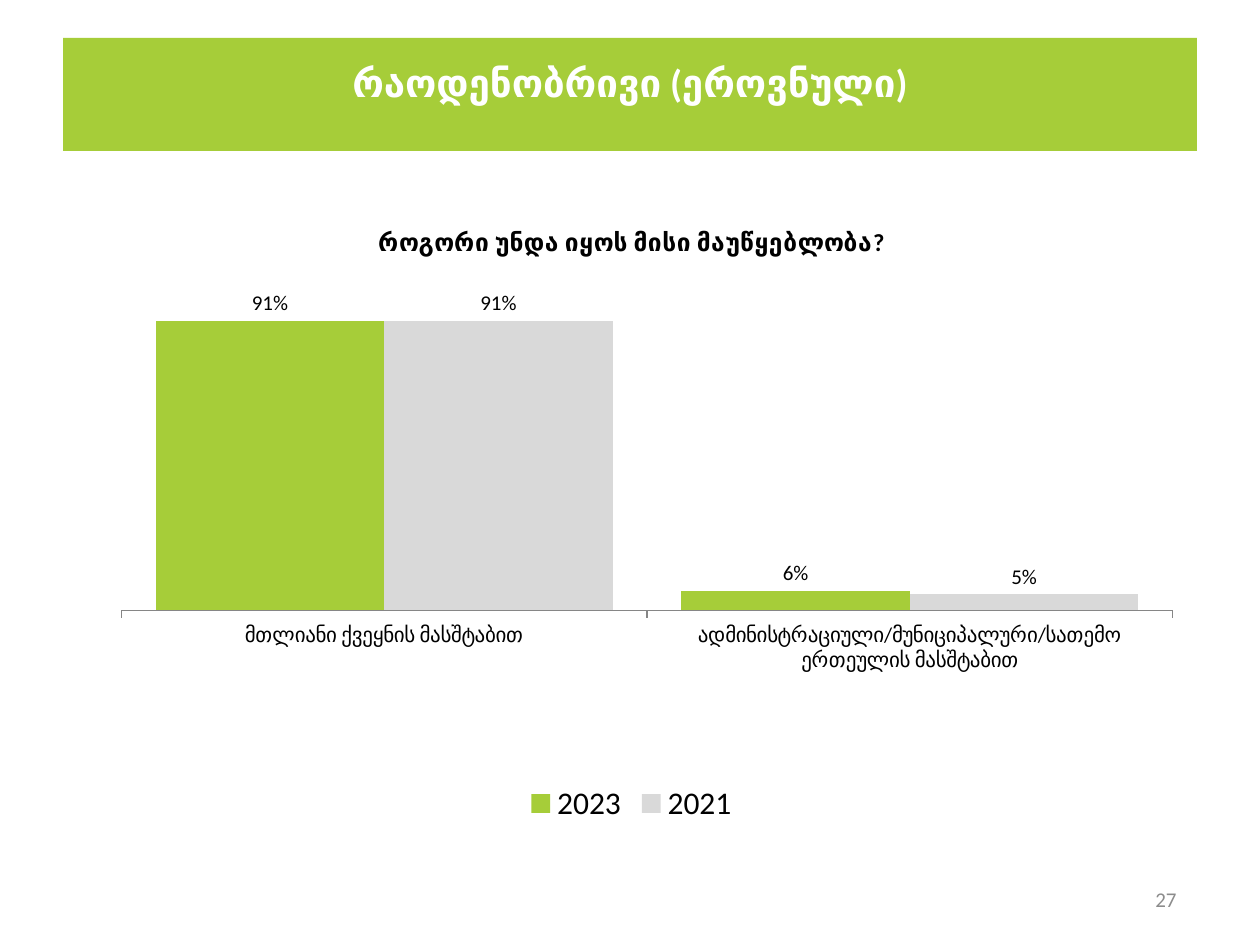
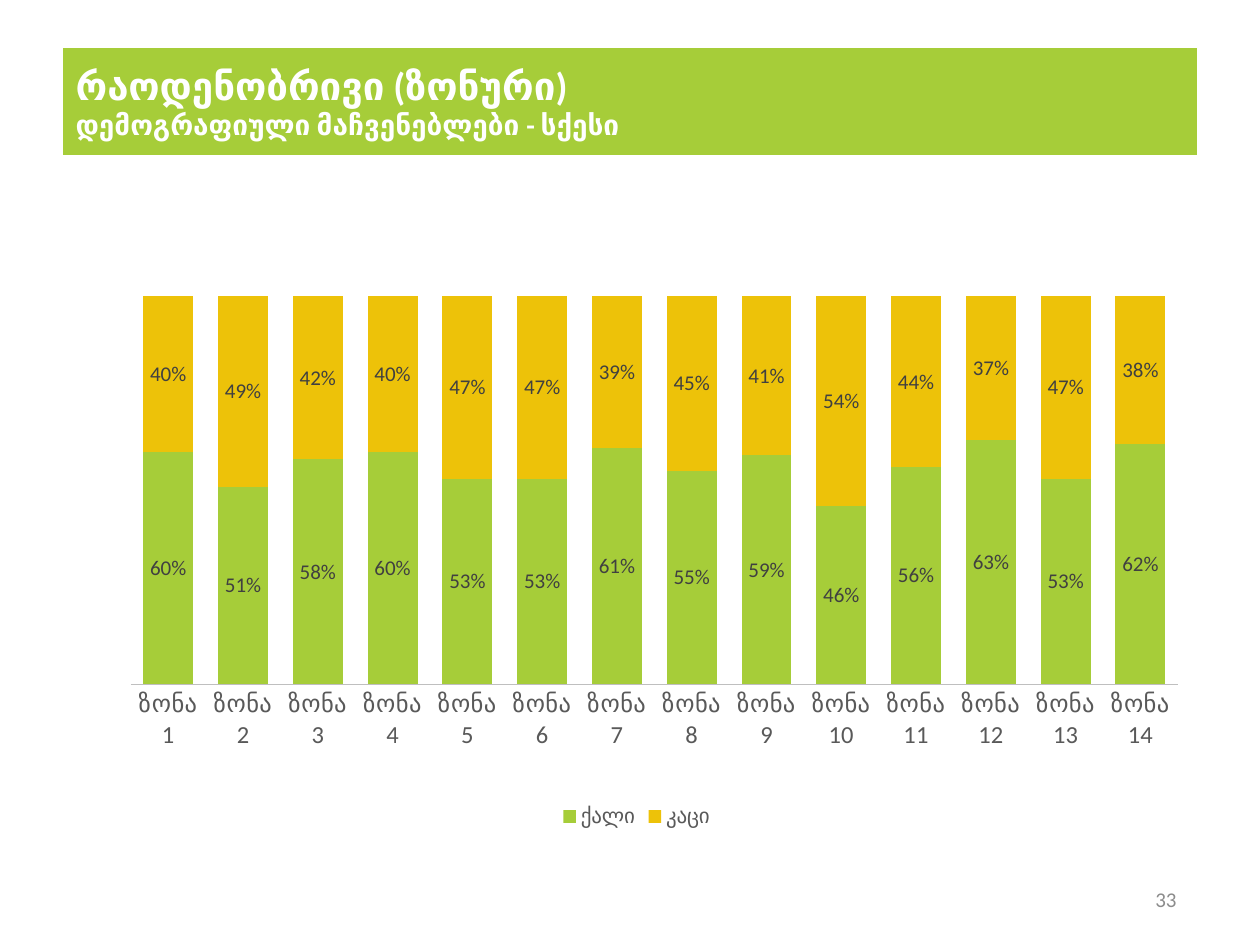
from dataclasses import dataclass

from lxml import etree
from pptx import Presentation
from pptx.chart.data import CategoryChartData
from pptx.dml.color import RGBColor
from pptx.enum.chart import (XL_CHART_TYPE, XL_LABEL_POSITION,
                             XL_LEGEND_POSITION, XL_TICK_MARK)
from pptx.enum.text import MSO_ANCHOR, MSO_AUTO_SIZE, PP_ALIGN
from pptx.oxml.ns import qn
from pptx.util import Emu, Pt

PX = 914400 / 126
TITLE_ONLY = 5
CLUSTERED, STACKED = XL_CHART_TYPE.COLUMN_CLUSTERED, XL_CHART_TYPE.COLUMN_STACKED
LABEL_ABOVE, LABEL_CENTER = XL_LABEL_POSITION.OUTSIDE_END, XL_LABEL_POSITION.CENTER
LEGEND_BOTTOM = XL_LEGEND_POSITION.BOTTOM
TICK_OUT, TICK_NONE = XL_TICK_MARK.OUTSIDE, XL_TICK_MARK.NONE
LEFT, CENTER, RIGHT = PP_ALIGN.LEFT, PP_ALIGN.CENTER, PP_ALIGN.RIGHT
MIDDLE, NO_FIT = MSO_ANCHOR.MIDDLE, MSO_AUTO_SIZE.NONE


@dataclass(frozen=True)
class Theme:
    font: str = "Calibri"
    green: str = "A6CD39"
    yellow: str = "EDC209"
    light_gray: str = "D9D9D9"
    white: str = "FFFFFF"
    black: str = "000000"
    label: str = "404040"
    axis_text: str = "595959"
    axis_dark: str = "868686"
    axis_light: str = "BFBFBF"
    number: str = "8C8C8C"
    title_size: int = 22
    subtitle_size: int = 16
    legend_size: int = 18
    heading_size: int = 14
    small_size: int = 12


THEME = Theme()


def px(value):
    return Emu(round(value * PX))


def set_format(target, values):
    for name, value in values.items():
        setattr(target, name, value)


class Deck:
    """Holds the theme and the slide being built."""

    def __init__(self, theme):
        self.theme = theme
        self.prs = Presentation()
        set_format(self.prs, {"slide_width": px(1260), "slide_height": px(945)})
        self.slide = None

    def new_slide(self):
        self.slide = self.prs.slides.add_slide(self.prs.slide_layouts[TITLE_ONLY])

    def font(self, font, size, color, bold=False):
        set_format(font, {"name": self.theme.font, "size": Pt(size), "bold": bold})
        font.color.rgb = RGBColor.from_string(color)

    def place(self, shape, box):
        set_format(shape, dict(zip(("left", "top", "width", "height"), map(px, box))))

    def title_band(self, box, title, subtitle=None, align=LEFT, lift=0):
        band = self.slide.shapes.title
        self.place(band, box)
        band.fill.solid()
        band.fill.fore_color.rgb = RGBColor.from_string(self.theme.green)
        set_format(band.text_frame, {
            "auto_size": NO_FIT, "word_wrap": True, "vertical_anchor": MIDDLE,
            "margin_top": px(6), "margin_bottom": px(6 + lift)})
        paragraph = band.text_frame.paragraphs[0]
        paragraph.alignment = align
        lines = [(title, self.theme.title_size)]
        if subtitle:
            lines.append((subtitle, self.theme.subtitle_size))
        for index, (text, size) in enumerate(lines):
            if index:
                paragraph.add_line_break()
            run = paragraph.add_run()
            run.text = text
            self.font(run.font, size, self.theme.white, True)

    def page_number(self, number):
        box = self.slide.shapes.add_textbox(*map(px, (1137, 874, 52, 50)))
        set_format(box.text_frame, {"word_wrap": True, "vertical_anchor": MIDDLE})
        paragraph = box.text_frame.paragraphs[0]
        set_format(paragraph, {"text": str(number), "alignment": RIGHT})
        self.font(paragraph.font, self.theme.small_size, self.theme.number)

    def layout(self, parent, index, **values):
        """Give a chart part a manual position, as fractions of the chart."""
        layout = parent.find(qn("c:layout"))
        if layout is None:
            layout = etree.Element(qn("c:layout"))
            parent.insert(index, layout)
        manual = etree.SubElement(layout, qn("c:manualLayout"))
        for name, value in values.items():
            etree.SubElement(manual, qn(f"c:{name}")).set("val", str(value))

    def column_chart(self, kind, box, categories, series, plot_area, maximum,
                     plot_format):
        data = CategoryChartData(number_format="0%")
        data.categories = categories
        for name, values, _ in series:
            data.add_series(name, values)
        chart = self.slide.shapes.add_chart(kind, *map(px, box), data).chart
        self.font(chart.font, self.theme.legend_size, self.theme.black)
        set_format(chart, {"has_title": False, "has_legend": True})
        set_format(chart.legend, {"position": LEGEND_BOTTOM, "include_in_layout": False})
        set_format(chart.value_axis, {
            "visible": False, "has_major_gridlines": False,
            "minimum_scale": 0, "maximum_scale": maximum, "major_unit": 0.2})
        set_format(chart.plots[0], {"vary_by_categories": False, **plot_format})
        for column, (_, _, color) in zip(chart.plots[0].series, series):
            column.invert_if_negative = False
            column.format.fill.solid()
            column.format.fill.fore_color.rgb = RGBColor.from_string(color)
        x, y, w, h = plot_area
        self.layout(chart.element.find(".//" + qn("c:plotArea")), 0,
                    layoutTarget="inner", xMode="edge", yMode="edge",
                    x=x, y=y, w=w, h=h)
        return chart

    def value_labels(self, chart, position, color):
        for column in chart.plots[0].series:
            labels = column.data_labels
            set_format(labels, {
                "show_value": True, "position": position,
                "number_format": "0%", "number_format_is_linked": False})
            self.font(labels.font, self.theme.small_size, color)

    def category_axis(self, chart, tick, size, color, line):
        axis = chart.category_axis
        set_format(axis, {"major_tick_mark": tick, "minor_tick_mark": TICK_NONE})
        self.font(axis.tick_labels.font, size, color)
        axis.format.line.color.rgb = RGBColor.from_string(line)
        axis.format.line.width = Pt(0.75)

    def chart_heading(self, chart, text, x, y):
        chart.has_title = True
        paragraph = chart.chart_title.text_frame.paragraphs[0]
        run = paragraph.add_run()
        run.text = text
        self.font(run.font, self.theme.heading_size, self.theme.black, True)
        self.layout(chart.chart_title.element, 1, xMode="edge", yMode="edge", x=x, y=y)

    def fade_columns(self, chart, opacity):
        for column in chart.plots[0].series:
            fill = column.format.fill.fore_color
            color = column.format.element if hasattr(column.format, "element") else None
            parent = color if color is not None else chart.element
            for node in parent.iterfind(
                    f".//{qn('c:ser')}/{qn('c:spPr')}/{qn('a:solidFill')}/{qn('a:srgbClr')}"):
                if node.get("val") == str(fill.rgb):
                    etree.SubElement(node, qn("a:alpha")).set("val", str(opacity * 1000))


def national_slide(deck):
    theme = deck.theme
    deck.new_slide()
    deck.title_band((63, 38, 1134, 113), "რაოდენობრივი (ეროვნული)",
                    align=CENTER, lift=24)
    deck.page_number(27)
    coverage = deck.column_chart(
        CLUSTERED, (71, 195, 1121, 634),
        ["მთლიანი ქვეყნის მასშტაბით",
         "ადმინისტრაციული/მუნიციპალური/სათემო ერთეულის მასშტაბით"],
        [("2023", (0.91, 0.06), theme.green),
         ("2021", (0.91, 0.05), theme.light_gray)],
        (0.045, 0.154, 0.938, 0.501), 1, {"gap_width": 30, "overlap": 0})
    deck.chart_heading(coverage, "როგორი უნდა იყოს მისი მაუწყებლობა?", 0.27, 0.04)
    deck.category_axis(coverage, TICK_OUT, theme.small_size, theme.black, theme.axis_dark)
    deck.value_labels(coverage, LABEL_ABOVE, theme.black)


def zones_slide(deck):
    theme = deck.theme
    women = (0.6, 0.51, 0.58, 0.6, 0.53, 0.53, 0.61,
             0.55, 0.59, 0.46, 0.56, 0.63, 0.53, 0.62)
    men = [round(1 - share, 2) for share in women]
    deck.new_slide()
    deck.title_band((63, 48, 1134, 107), "რაოდენობრივი (ზონური)",
                    "დემოგრაფიული მაჩვენებლები - სქესი")
    deck.page_number(33)
    gender = deck.column_chart(
        STACKED, (76, 200, 1121, 634),
        [f"ზონა {zone}" for zone in range(1, len(women) + 1)],
        [("ქალი", women, theme.green), ("კაცი", men, theme.yellow)],
        (0.049, 0.03, 0.934, 0.734), 1.2, {"gap_width": 50, "overlap": 100})
    deck.fade_columns(gender, 70)
    deck.category_axis(gender, TICK_NONE, theme.heading_size, theme.axis_text,
                       theme.axis_light)
    deck.value_labels(gender, LABEL_CENTER, theme.label)
    deck.font(gender.legend.font, theme.small_size, theme.axis_text)


def main():
    deck = Deck(THEME)
    national_slide(deck)
    zones_slide(deck)
    deck.prs.save("out.pptx")


if __name__ == "__main__":
    main()
